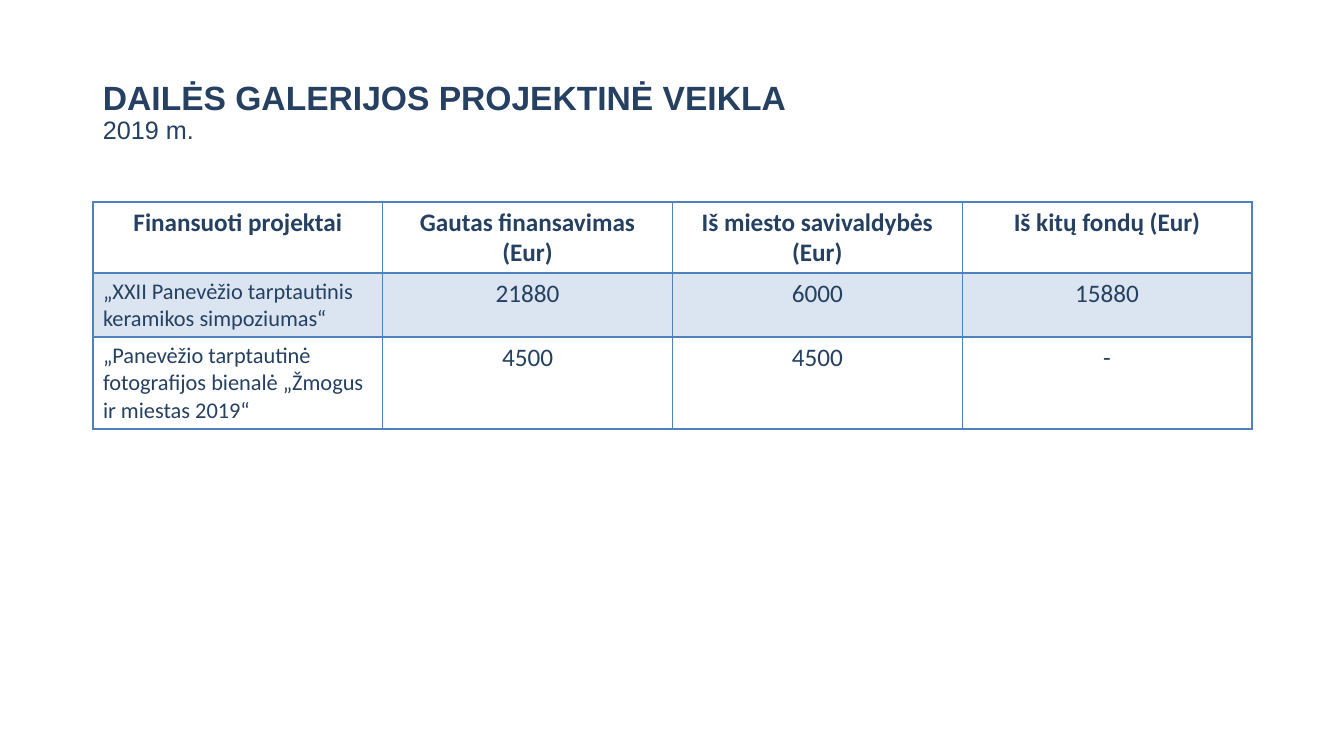
from lxml import etree
from pptx import Presentation
from pptx import util as u
from pptx.dml.color import RGBColor
from pptx.enum import text
from pptx.oxml.ns import qn

TITLE = "DAILĖS GALERIJOS PROJEKTINĖ VEIKLA"
YEAR = "2019 m."
ROWS = [
    ("Finansuoti projektai", "Gautas finansavimas (Eur)", "Iš miesto savivaldybės (Eur)", "Iš kitų fondų (Eur)"),
    ("„XXII Panevėžio tarptautinis keramikos simpoziumas“", "21880", "6000", "15880"),
    ("„Panevėžio tarptautinė fotografijos bienalė „Žmogus ir miestas 2019“", "4500", "4500", "-"),
]
ROW_HEIGHTS = (71, 64, 92)
LEFT, WIDTH = 93, 1159
TITLE_TOP, TITLE_HEIGHT = 40, 146
TABLE_TOP = 202
NAVY, BLUE = "254061", "4F81BD"
BAND_ALPHA = 20


def px(n):
    return u.Emu(round(n * 914400 / 100.8))


def color(value):
    return RGBColor.from_string(value)


def write(p, words, font="Calibri", size=18, bold=False, align=text.PP_ALIGN.LEFT):
    p.alignment = align
    r = p.add_run()
    r.text = words
    r.font.name, r.font.size, r.font.bold = font, u.Pt(size), bold
    r.font.color.rgb = color(NAVY)


def add_border(cell, side, points):
    ln = etree.SubElement(cell._tc.get_or_add_tcPr(), qn("a:ln" + side), w=str(u.Pt(points)))
    fill = etree.SubElement(ln, qn("a:solidFill"))
    etree.SubElement(fill, qn("a:srgbClr"), val=BLUE)


def fill_band(cell):
    cell.fill.solid()
    cell.fill.fore_color.rgb = color(BLUE)
    clr = cell._tc.tcPr.find(qn("a:solidFill")).find(qn("a:srgbClr"))
    etree.SubElement(clr, qn("a:alpha"), val=str(BAND_ALPHA * 1000))


def add_title(s):
    tf = s.shapes.add_textbox(px(LEFT), px(TITLE_TOP), px(WIDTH), px(TITLE_HEIGHT)).text_frame
    tf.word_wrap = True
    tf.vertical_anchor = text.MSO_ANCHOR.MIDDLE
    p = tf.paragraphs[0]
    p.line_spacing = 0.9
    write(p, TITLE, font="Arial", size=24, bold=True)
    p.add_line_break()
    write(p, YEAR, font="Arial")


def add_projects(s):
    table = s.shapes.add_table(len(ROWS), len(ROWS[0]), px(LEFT), px(TABLE_TOP),
                               px(WIDTH), px(sum(ROW_HEIGHTS))).table
    table.first_row = table.horz_banding = False
    for i, row in enumerate(ROWS):
        table.rows[i].height = px(ROW_HEIGHTS[i])
        for j, words in enumerate(row):
            cell = table.cell(i, j)
            header, project = i == 0, i > 0 and j == 0
            write(cell.text_frame.paragraphs[0], words, size=16 if project else 18, bold=header,
                  align=text.PP_ALIGN.LEFT if project else text.PP_ALIGN.CENTER)
            for side in "LRTB":
                add_border(cell, side, 2 if (i, side) in ((0, "B"), (1, "T")) else 1)
            if i == 1:
                fill_band(cell)
            else:
                cell.fill.background()


def main():
    prs = Presentation()
    prs.slide_width, prs.slide_height = px(1344), px(756)
    s = prs.slides.add_slide(prs.slide_layouts[6])
    add_title(s)
    add_projects(s)
    prs.save("out.pptx")


if __name__ == "__main__":
    main()
